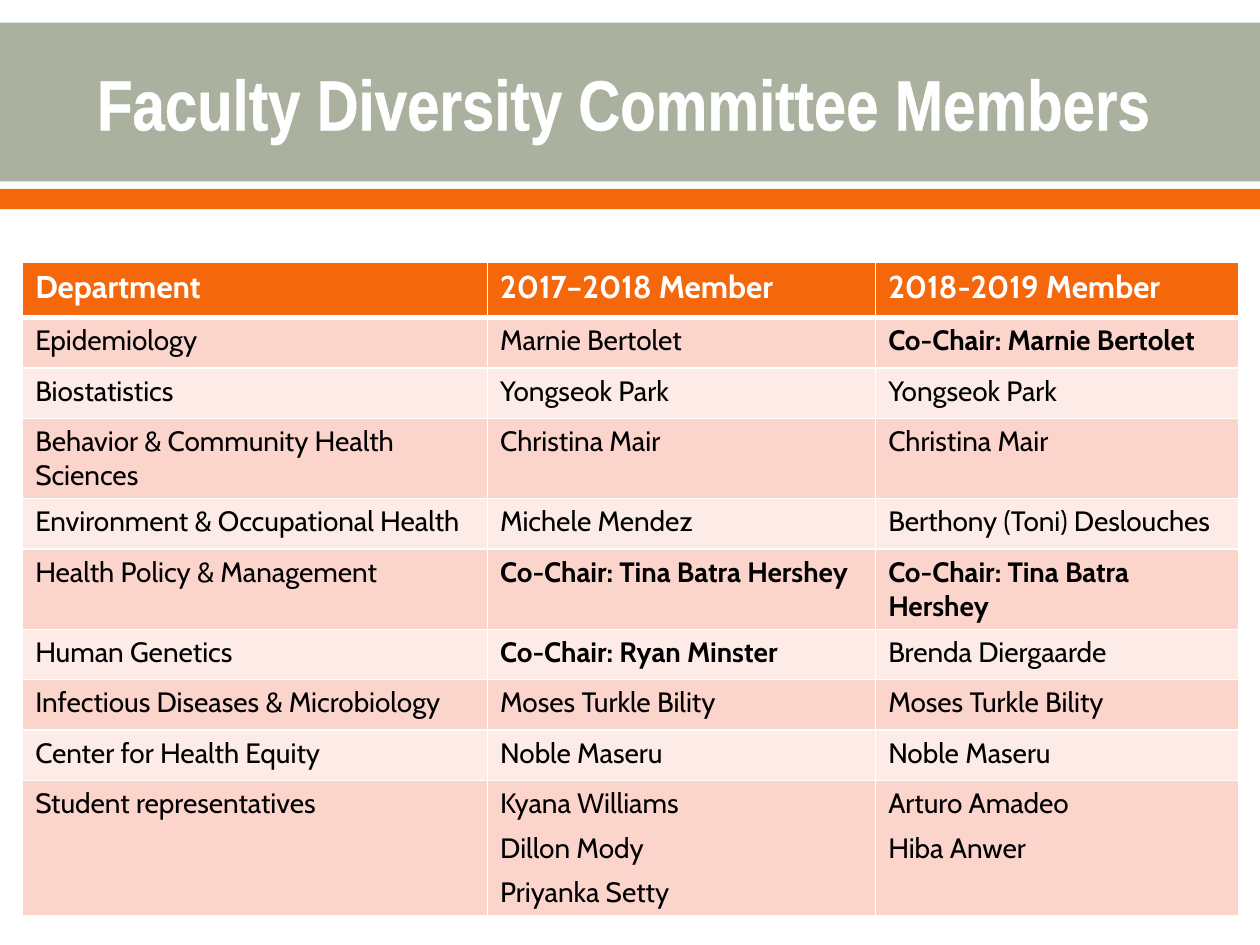
from lxml import etree
from pptx import Presentation
from pptx.dml.color import RGBColor
from pptx.enum.shapes import MSO_SHAPE as Shape
from pptx.enum.text import MSO_ANCHOR as Anchor, PP_ALIGN as Align
from pptx.oxml.ns import qn
from pptx.util import Inches, Pt

WHITE = RGBColor(0xFF, 0xFF, 0xFF)
BLACK = RGBColor(0, 0, 0)
SAGE = RGBColor(0xAB, 0xB1, 0x9F)
ORANGE = RGBColor(0xF4, 0x68, 0x0B)
ROSE = RGBColor(0xFB, 0xD4, 0xCC)
BLUSH = RGBColor(0xFD, 0xEB, 0xE7)

ROWS = [
    ("Department", "2017–2018 Member", "2018-2019 Member"),
    ("Epidemiology", "Marnie Bertolet", "Co-Chair: Marnie Bertolet"),
    ("Biostatistics", "Yongseok Park", "Yongseok Park"),
    ("Behavior & Community Health Sciences", "Christina Mair", "Christina Mair"),
    ("Environment & Occupational Health", "Michele Mendez", "Berthony (Toni) Deslouches"),
    ("Health Policy & Management", "Co-Chair: Tina Batra Hershey", "Co-Chair: Tina Batra Hershey"),
    ("Human Genetics", "Co-Chair: Ryan Minster", "Brenda Diergaarde"),
    ("Infectious Diseases & Microbiology", "Moses Turkle Bility", "Moses Turkle Bility"),
    ("Center for Health Equity", "Noble Maseru", "Noble Maseru"),
    ("Student representatives", "Kyana Williams\nDillon Mody\nPriyanka Setty",
     "Arturo Amadeo\nHiba Anwer"),
]


def add_line(parent, tag, width, index):
    """Put a solid white line into a cell's or a run's properties."""
    line = etree.Element(qn(tag), w=str(Pt(width)))
    fill = etree.SubElement(line, qn("a:solidFill"))
    etree.SubElement(fill, qn("a:srgbClr"), val=str(WHITE))
    parent.insert(index, line)


prs = Presentation()
prs.slide_width, prs.slide_height = Inches(10), Inches(7.5)
slide = prs.slides.add_slide(prs.slide_layouts[5])
title = slide.shapes.title

# Header bands, behind the title
for top, high, color in [(0.18, 1.26, SAGE), (1.5, 0.16, ORANGE)]:
    band = slide.shapes.add_shape(Shape.RECTANGLE, 0, Inches(top), Inches(10), Inches(high))
    band.shadow.inherit = False
    band.fill.solid()
    band.fill.fore_color.rgb = color
    band.line.fill.background()
    title._element.addprevious(band._element)

# Title
title.left, title.top = Inches(0.33), Inches(0.2)
title.width, title.height = Inches(9.25), Inches(1.22)
frame = title.text_frame
frame.text = "Faculty Diversity Committee Members"
frame.vertical_anchor = Anchor.MIDDLE
para = frame.paragraphs[0]
para.alignment = Align.CENTER
font = para.runs[0].font
font.name, font.size, font.bold = "Arial Narrow", Pt(40.5), True
font.color.rgb = WHITE
add_line(font._element, "a:ln", 1.1, 0)

# Member table
table = slide.shapes.add_table(len(ROWS), 3, Inches(0.18), Inches(2.08),
                               Inches(9.65), Inches(4.04)).table
for col, width in zip(table.columns, (3.69, 3.08, 2.88)):
    col.width = Inches(width)

for r, names in enumerate(ROWS):
    head = r == 0
    table.rows[r].height = Inches(0.44 if head else 0.4)
    for c, text in enumerate(names):
        cell = table.cell(r, c)
        cell.text = text
        cell.fill.solid()
        cell.fill.fore_color.rgb = ORANGE if head else ROSE if r % 2 else BLUSH
        for para in cell.text_frame.paragraphs:
            font = para.font
            font.name, font.size = "Cabin", Pt(18 if head else 16)
            font.bold = head or text.startswith("Co-Chair")
            font.color.rgb = WHITE if head else BLACK
            if not head:
                para.space_after = Pt(6)
        # White grid, thicker between the head and the body
        for i, side in enumerate("LRTB"):
            thick = (r, side) in [(0, "B"), (1, "T")]
            add_line(cell._tc.get_or_add_tcPr(), f"a:ln{side}", 3 if thick else 1, i)

prs.save("out.pptx")
